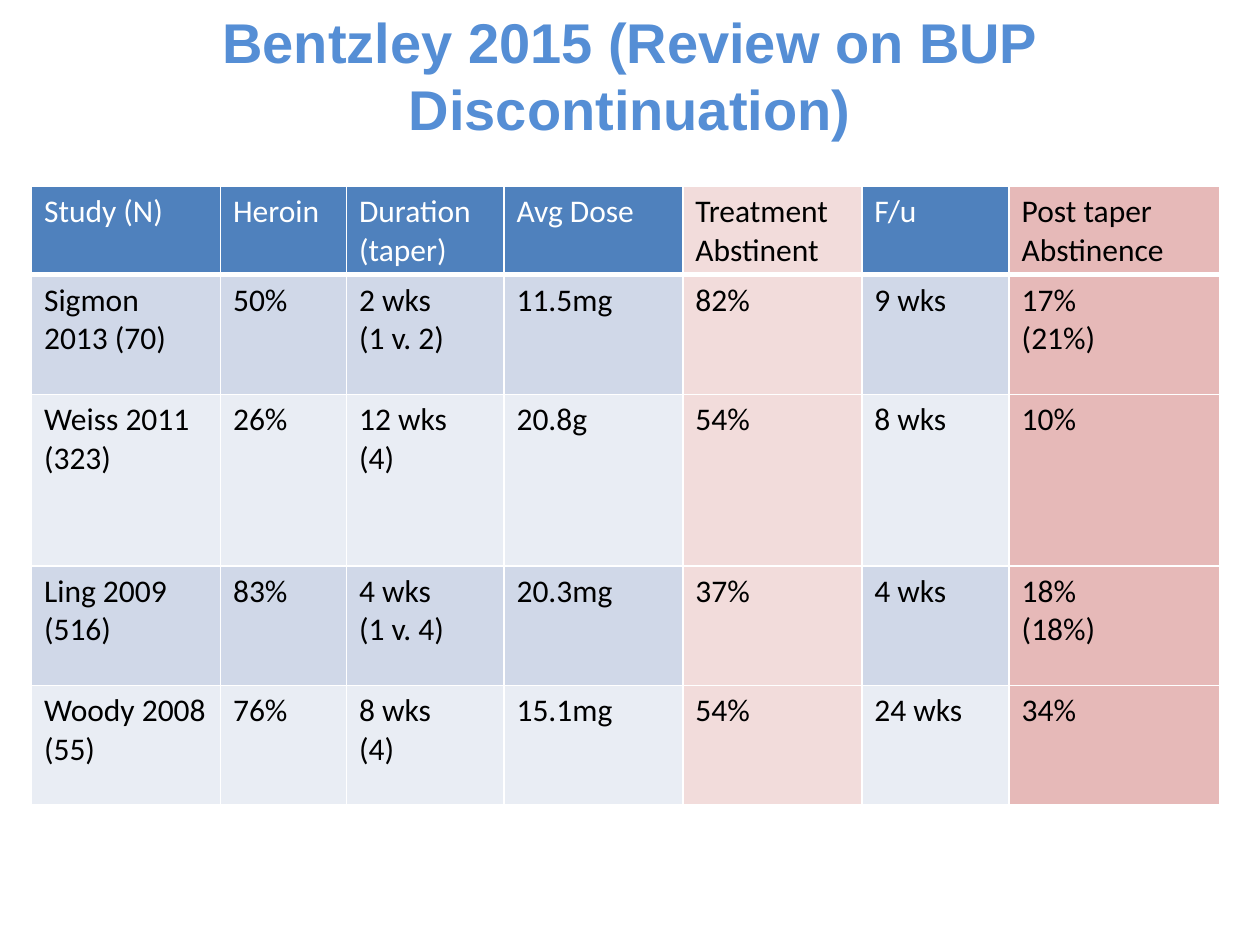
"""Build the slide comparing studies of buprenorphine discontinuation."""
from dataclasses import dataclass

from lxml.etree import SubElement
from pptx import Presentation
from pptx.dml.color import RGBColor
from pptx.enum.text import MSO_ANCHOR as Anchor, PP_ALIGN as Align
from pptx.oxml.ns import qn
from pptx.slide import Slide
from pptx.table import _Cell as Cell
from pptx.text.text import TextFrame
from pptx.util import Inches, Pt

WHITE = RGBColor(0xFF, 0xFF, 0xFF)
BLACK = RGBColor(0x00, 0x00, 0x00)
TITLE_BLUE = RGBColor(0x55, 0x8E, 0xD5)
HEADER_BLUE = RGBColor(0x4F, 0x81, 0xBD)
BAND_DARK = RGBColor(0xD0, 0xD8, 0xE8)
BAND_LIGHT = RGBColor(0xE9, 0xED, 0xF4)
PALE_ROSE = RGBColor(0xF2, 0xDC, 0xDB)
ROSE = RGBColor(0xE6, 0xB9, 0xB8)


@dataclass(frozen=True)
class Column:
    heading: str
    width: float
    highlight: RGBColor | None = None


@dataclass(frozen=True)
class Study:
    height: float
    values: tuple[str, ...]


COLUMNS = (
    Column("Study (N)", 1.5),
    Column("Heroin", 1),
    Column("Duration\n(taper)", 1.25),
    Column("Avg Dose", 1.42),
    Column("Treatment Abstinent", 1.42, PALE_ROSE),
    Column("F/u", 1.17),
    Column("Post taper Abstinence", 1.67, ROSE),
)
STUDIES = (
    Study(0.95, ("Sigmon 2013 (70)", "50%", "2 wks\n(1 v. 2)", "11.5mg", "82%", "9 wks", "17%\n(21%)")),
    Study(1.36, ("Weiss 2011 (323)", "26%", "12 wks\n(4)", "20.8g", "54%", "8 wks", "10%")),
    Study(0.95, ("Ling 2009 (516)", "83%", "4 wks\n(1 v. 4)", "20.3mg", "37%", "4 wks", "18%\n(18%)")),
    Study(0.95, ("Woody 2008 (55)", "76%", "8 wks\n(4)", "15.1mg", "54%", "24 wks", "34%")),
)
HEADER_HEIGHT = 0.7


def write_text(frame: TextFrame, text: str, *, size: float, font: str, color: RGBColor,
               bold: bool = False, align: Align = Align.LEFT) -> None:
    paragraph = frame.paragraphs[0]
    paragraph.text = text
    paragraph.alignment = align
    for run in paragraph.runs:
        run.font.size = Pt(size)
        run.font.name = font
        run.font.bold = bold
        run.font.color.rgb = color


def set_borders(cell: Cell, bottom: float) -> None:
    properties = cell._tc.get_or_add_tcPr()
    for side, width in {"L": 1, "R": 1, "T": 1, "B": bottom}.items():
        line = SubElement(properties, qn(f"a:ln{side}"), w=str(Pt(width)))
        fill = SubElement(line, qn("a:solidFill"))
        SubElement(fill, qn("a:srgbClr"), val=str(WHITE))


def format_cell(cell: Cell, text: str, *, fill: RGBColor, color: RGBColor, bottom: float = 1) -> None:
    set_borders(cell, bottom)
    cell.fill.solid()
    cell.fill.fore_color.rgb = fill
    write_text(cell.text_frame, text, size=18, font="Calibri", color=color)


def add_title(slide: Slide, text: str) -> None:
    shape = slide.shapes.add_textbox(Inches(0.5), Inches(0.21), Inches(9), Inches(0.76))
    frame = shape.text_frame
    frame.word_wrap = True
    frame.vertical_anchor = Anchor.MIDDLE
    write_text(frame, text, size=32, font="Arial", color=TITLE_BLUE, bold=True, align=Align.CENTER)


def add_study_table(slide: Slide) -> None:
    heights = [HEADER_HEIGHT, *(study.height for study in STUDIES)]
    width = sum(column.width for column in COLUMNS)
    table = slide.shapes.add_table(len(heights), len(COLUMNS), Inches(0.25), Inches(1.48),
                                   Inches(width), Inches(sum(heights))).table
    for row, height in zip(table.rows, heights):
        row.height = Inches(height)
    for index, column in enumerate(COLUMNS):
        table.columns[index].width = Inches(column.width)
        format_cell(table.cell(0, index), column.heading, fill=column.highlight or HEADER_BLUE,
                    color=BLACK if column.highlight else WHITE, bottom=3)
        for number, study in enumerate(STUDIES, start=1):
            band = BAND_DARK if number % 2 else BAND_LIGHT
            format_cell(table.cell(number, index), study.values[index],
                        fill=column.highlight or band, color=BLACK)


def main() -> None:
    presentation = Presentation()
    presentation.slide_width, presentation.slide_height = Inches(10), Inches(7.5)
    slide = presentation.slides.add_slide(presentation.slide_layouts[6])
    add_title(slide, "Bentzley 2015 (Review on BUP Discontinuation)")
    add_study_table(slide)
    presentation.save("out.pptx")


if __name__ == "__main__":
    main()
